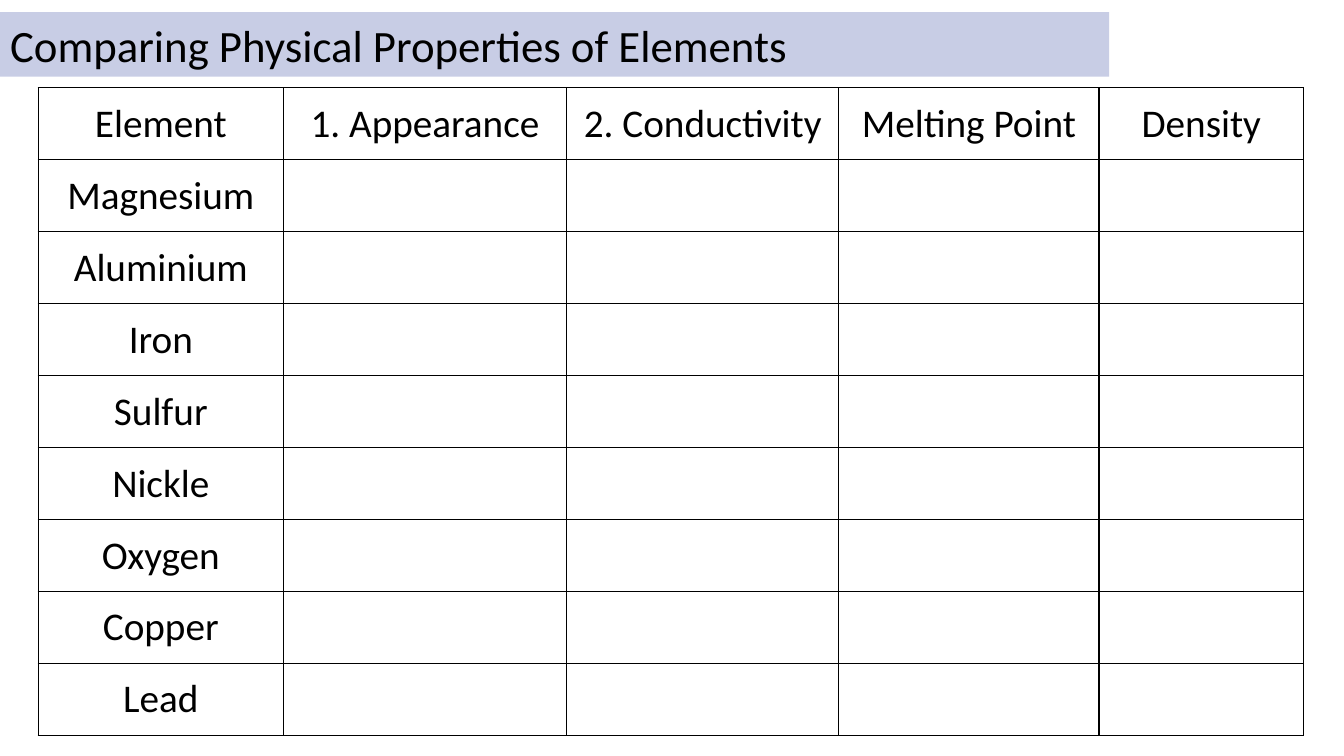
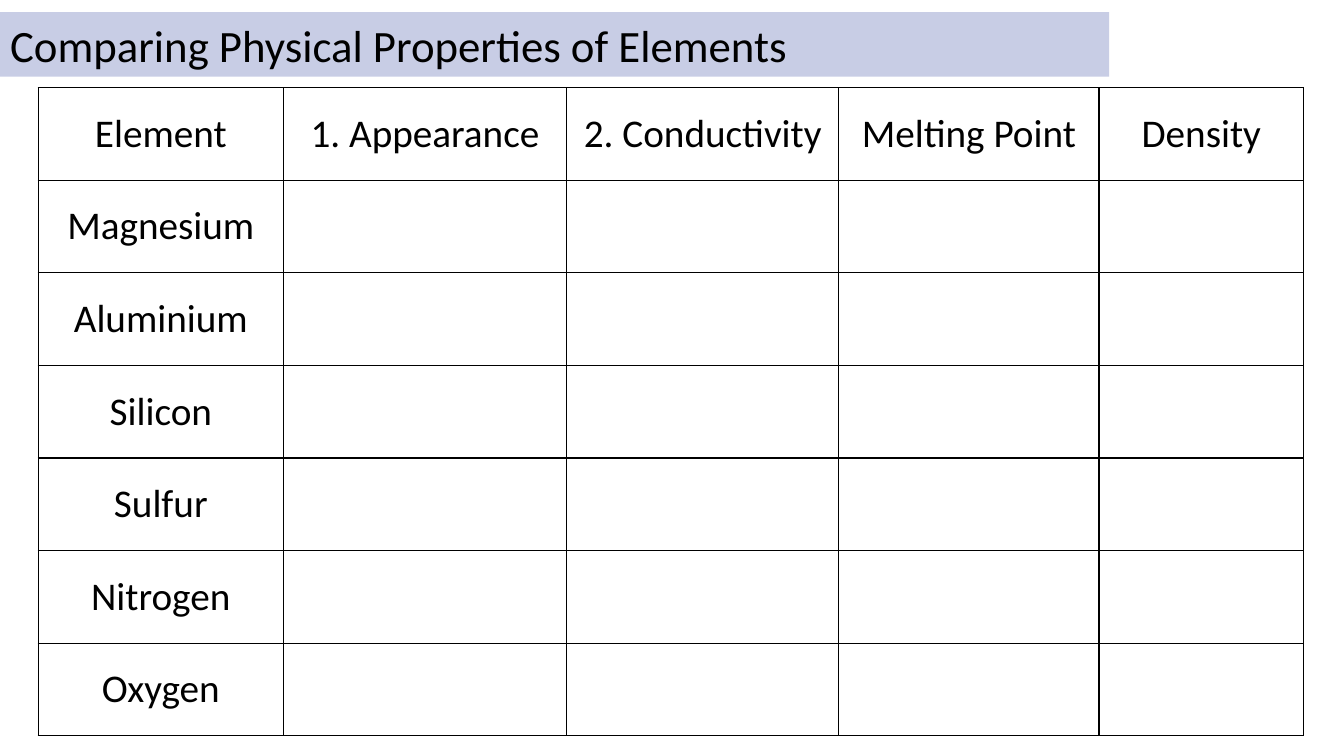
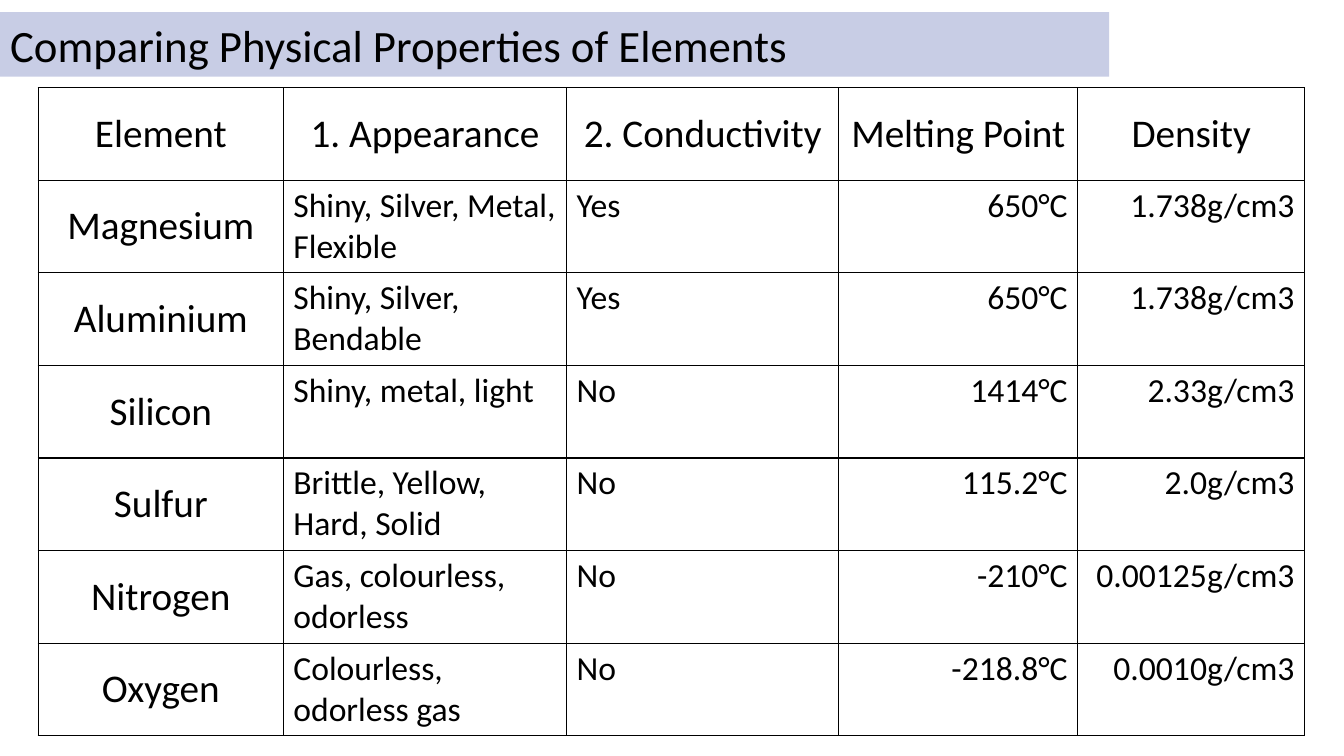
"""Build three slides comparing the physical properties of elements."""
from pptx import Presentation
from pptx.dml.color import RGBColor
from pptx.enum.text import MSO_ANCHOR, MSO_AUTO_SIZE, PP_ALIGN
from pptx.oxml import parse_xml
from pptx.oxml.ns import nsdecls
from pptx.util import Inches, Pt

LEFT, CENTER, RIGHT = PP_ALIGN.LEFT, PP_ALIGN.CENTER, PP_ALIGN.RIGHT
TOP, MIDDLE = MSO_ANCHOR.TOP, MSO_ANCHOR.MIDDLE
NO_AUTOFIT = MSO_AUTO_SIZE.NONE

THEME = {
    "font": "Calibri",
    "ink": RGBColor.from_string("000000"),
    "paper": RGBColor.from_string("FFFFFF"),
    "band": RGBColor.from_string("C8CDE5"),
    "title": Pt(32),
    "label": Pt(28),
    "value": Pt(24),
    "border": Pt(1),
}

TITLE = "Comparing Physical Properties of Elements"
HEADERS = ["Element", "1. Appearance", "2. Conductivity", "Melting Point", "Density"]
VALUE_ALIGN = [LEFT, LEFT, RIGHT, RIGHT]
FIRST_SET = ["Magnesium", "Aluminium", "Iron", "Sulfur", "Nickle", "Oxygen", "Copper", "Lead"]
RESULTS = [
    ("Magnesium", "Shiny, Silver, Metal, Flexible", "Yes", "650°C", "1.738g/cm3"),
    ("Aluminium", "Shiny, Silver, Bendable", "Yes", "650°C", "1.738g/cm3"),
    ("Silicon", "Shiny, metal, light", "No", "1414°C", "2.33g/cm3"),
    ("Sulfur", "Brittle, Yellow, Hard, Solid", "No", "115.2°C", "2.0g/cm3"),
    ("Nitrogen", "Gas, colourless,\nodorless", "No", "-210°C", "0.00125g/cm3"),
    ("Oxygen", "Colourless, odorless gas", "No", "-218.8°C", "0.0010g/cm3"),
]
BLANK_COLS = [2.43, 2.81, 2.7, 2.58, 2.03]
RESULT_COLS = [2.43, 2.81, 2.7, 2.37, 2.25]
SLIDES = [
    ([(name,) for name in FIRST_SET], BLANK_COLS),
    ([row[:1] for row in RESULTS], BLANK_COLS),
    (RESULTS, RESULT_COLS),
]

SLIDE_SIZE = (13.33, 7.5)
BAND_BOX = (0, 0.12, 11, 0.64)
TABLE_LEFT, TABLE_TOP, TABLE_HEIGHT = 0.38, 0.87, 6.43


def style_text(tf, size, align):
    for p in tf.paragraphs:
        p.alignment = align
        p.font.name = THEME["font"]
        p.font.size = size
        p.font.color.rgb = THEME["ink"]


def add_title(s):
    sp = s.shapes.title
    sp.left, sp.top, sp.width, sp.height = map(Inches, BAND_BOX)
    sp.fill.solid()
    sp.fill.fore_color.rgb = THEME["band"]
    tf = sp.text_frame
    tf.text = TITLE
    tf.auto_size = NO_AUTOFIT
    tf.vertical_anchor = MIDDLE
    style_text(tf, THEME["title"], LEFT)


def add_borders(cell):
    tc_pr = cell._tc.get_or_add_tcPr()
    for i, side in enumerate("LRTB"):
        tc_pr.insert(i, parse_xml(
            f'<a:ln{side} {nsdecls("a")} w="{THEME["border"]}"><a:solidFill>'
            f'<a:srgbClr val="{THEME["ink"]}"/></a:solidFill></a:ln{side}>'))


def fill_cell(cell, text, is_label, align):
    cell.fill.solid()
    cell.fill.fore_color.rgb = THEME["paper"]
    add_borders(cell)
    cell.text = text
    cell.vertical_anchor = MIDDLE if is_label else TOP
    style_text(cell.text_frame, THEME["label" if is_label else "value"], align)


def add_grid(s, rows, widths):
    rows = [HEADERS, *rows]
    frame = s.shapes.add_table(
        len(rows), len(widths), Inches(TABLE_LEFT), Inches(TABLE_TOP),
        Inches(sum(widths)), Inches(TABLE_HEIGHT))
    table = frame.table
    table.first_row = table.horz_banding = False
    for column, width in zip(table.columns, widths):
        column.width = Inches(width)
    for r, row in enumerate(rows):
        for c in range(len(widths)):
            is_label = r == 0 or c == 0
            text = row[c] if c < len(row) else ""
            align = CENTER if is_label else VALUE_ALIGN[c - 1]
            fill_cell(table.cell(r, c), text, is_label, align)


def main():
    prs = Presentation()
    prs.slide_width, prs.slide_height = map(Inches, SLIDE_SIZE)
    title_only = prs.slide_layouts.get_by_name("Title Only")
    for rows, widths in SLIDES:
        s = prs.slides.add_slide(title_only)
        add_title(s)
        add_grid(s, rows, widths)
    prs.save("out.pptx")


if __name__ == "__main__":
    main()
